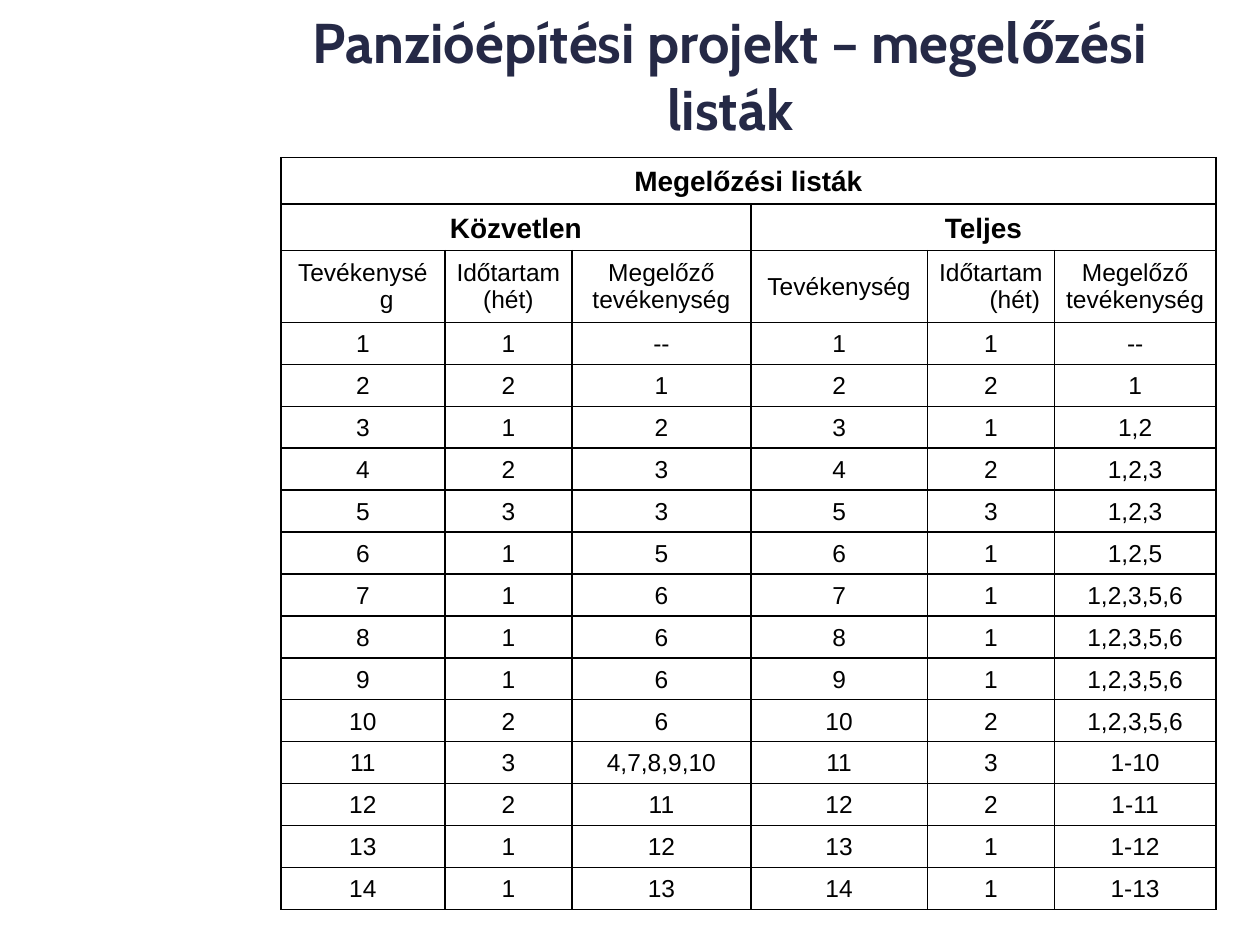
"""Build the slide with the precedence lists of the guesthouse project."""
from lxml import etree
from pptx import Presentation, util as u
from pptx.dml.color import RGBColor
from pptx.enum import text as t
from pptx.oxml import ns

NAVY = RGBColor(0x25, 0x29, 0x46)
BLACK = RGBColor(0, 0, 0)
WHITE = RGBColor(255, 255, 255)

TITLE = "Panzióépítési projekt – megelőzési listák"
TOP = "Megelőzési listák"
GROUPS = ["Közvetlen", "Teljes"]
HEADS = ["Tevékenység", "Időtartam (hét)", "Megelőző tevékenység"]
FLUSH = {1, 2, 5}
TASKS = [
    (1, "--", "--"),
    (2, "1", "1"),
    (1, "2", "1,2"),
    (2, "3", "1,2,3"),
    (3, "3", "1,2,3"),
    (1, "5", "1,2,5"),
    (1, "6", "1,2,3,5,6"),
    (1, "6", "1,2,3,5,6"),
    (1, "6", "1,2,3,5,6"),
    (2, "6", "1,2,3,5,6"),
    (3, "4,7,8,9,10", "1-10"),
    (2, "11", "1-11"),
    (1, "12", "1-12"),
    (1, "13", "1-13"),
]
WIDTHS = [1.3, 1.01, 1.42, 1.4, 1.01, 1.28]
TALL = [0.37, 0.37, 0.57]
LEFT, UPPER, WIDE, HIGH = 2.23, 1.25, 7.41, 5.97


def style(para, font, size, color, bold):
    para.alignment = t.PP_ALIGN.CENTER
    para.font.name = font
    para.font.size = u.Pt(size)
    para.font.color.rgb = color
    para.font.bold = bold


def border(cell):
    props = cell._tc.get_or_add_tcPr()
    for side in ("lnL", "lnR", "lnT", "lnB"):
        line = etree.SubElement(props, ns.qn(f"a:{side}"), w=str(u.Pt(1)))
        fill = etree.SubElement(line, ns.qn("a:solidFill"))
        etree.SubElement(fill, ns.qn("a:srgbClr"), val=str(BLACK))


def write(cell, words, row, col):
    cell.text = str(words)
    cell.vertical_anchor = t.MSO_ANCHOR.MIDDLE if row == 2 else t.MSO_ANCHOR.BOTTOM
    cell.margin_left = cell.margin_right = u.Inches(0.09)
    cell.margin_top = cell.margin_bottom = u.Inches(0.05)
    para = cell.text_frame.paragraphs[0]
    if row != 2 or col not in FLUSH:
        props = para._p.get_or_add_pPr()
        props.set("marL", str(u.Inches(0.38)))
        props.set("indent", str(-u.Inches(0.38)))
    style(para, "Arial", 16 if row < 2 else 14, BLACK, row < 2)


def add_title(slide):
    title = slide.shapes.title
    title.left, title.top = u.Inches(2.09), u.Inches(-0.03)
    title.width, title.height = u.Inches(7.41), u.Inches(1.25)
    frame = title.text_frame
    frame.text = TITLE
    frame.word_wrap = True
    frame.auto_size = t.MSO_AUTO_SIZE.NONE
    frame.vertical_anchor = t.MSO_ANCHOR.MIDDLE
    style(frame.paragraphs[0], "Cabin", 32, NAVY, True)


def add_lists(slide):
    rows = [[TOP] + [""] * 5, [GROUPS[0], "", "", GROUPS[1], "", ""], HEADS * 2]
    for num, (weeks, direct, full) in enumerate(TASKS, 1):
        rows.append([num, weeks, direct, num, weeks, full])
    place = [u.Inches(n) for n in (LEFT, UPPER, WIDE, HIGH)]
    table = slide.shapes.add_table(len(rows), len(WIDTHS), *place).table
    table.first_row = table.horz_banding = False
    for col, width in zip(table.columns, WIDTHS):
        col.width = u.Inches(width)
    step = (HIGH - sum(TALL)) / len(TASKS)
    for row, height in zip(table.rows, TALL + [step] * len(TASKS)):
        row.height = u.Inches(height)
    for r, row in enumerate(rows):
        for c, words in enumerate(row):
            cell = table.cell(r, c)
            border(cell)
            cell.fill.solid()
            cell.fill.fore_color.rgb = WHITE
            write(cell, words, r, c)
    for r, first, last in ((0, 0, 5), (1, 0, 2), (1, 3, 5)):
        table.cell(r, first).merge(table.cell(r, last))


def main():
    deck = Presentation()
    deck.slide_width, deck.slide_height = u.Inches(10), u.Inches(7.5)
    slide = deck.slides.add_slide(deck.slide_layouts[5])
    add_title(slide)
    add_lists(slide)
    deck.save("out.pptx")


if __name__ == "__main__":
    main()
